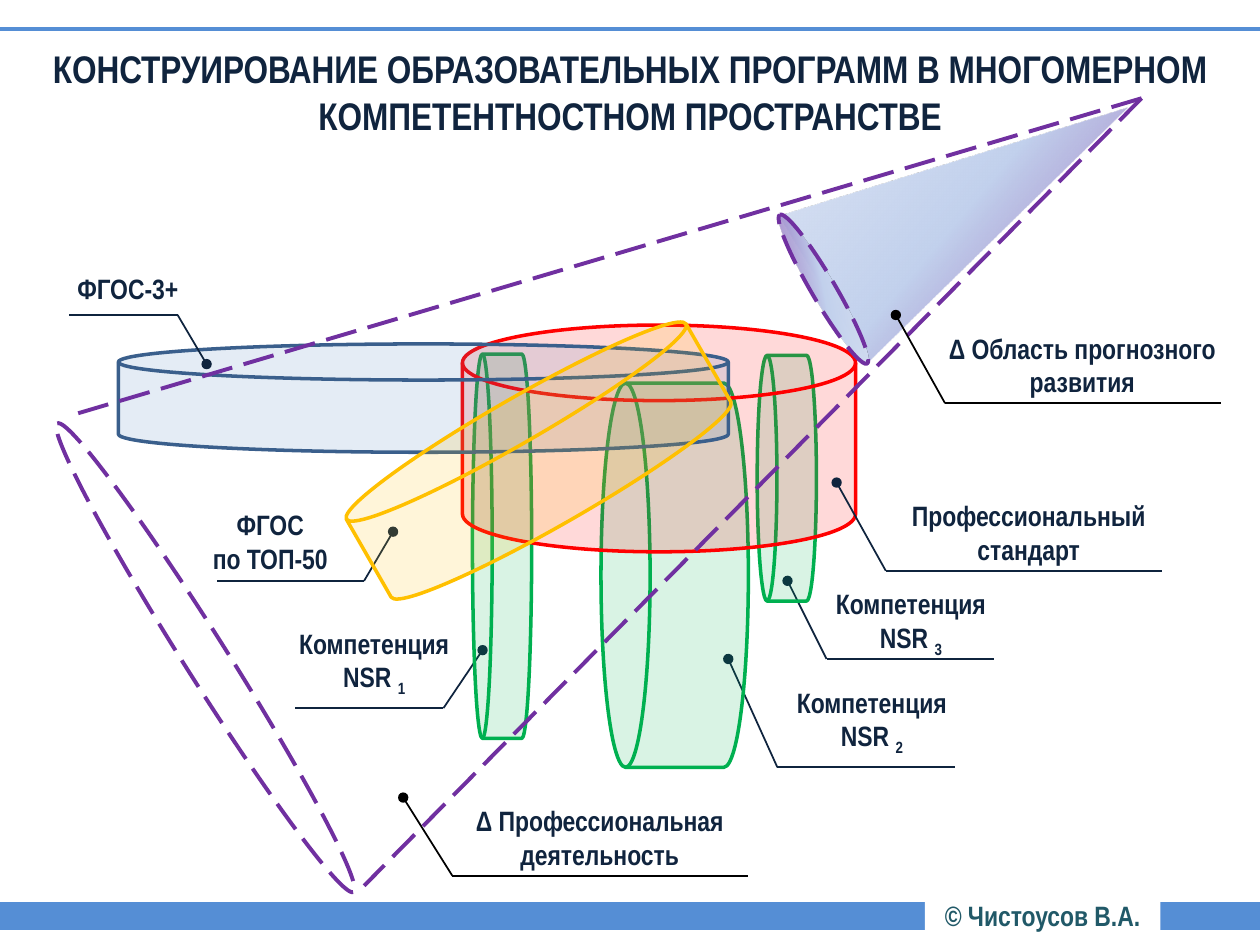
"""Builds the slide on designing educational programmes in a competence space."""
from dataclasses import dataclass

import pptx
import pptx.dml.color
import pptx.enum.dml
import pptx.enum.shapes
import pptx.enum.text
import pptx.oxml.ns
import pptx.util
from lxml import etree

SHAPE = pptx.enum.shapes.MSO_SHAPE
DISK = SHAPE.FLOWCHART_MAGNETIC_DISK
LINE = pptx.enum.shapes.MSO_CONNECTOR.STRAIGHT
DASH = pptx.enum.dml.MSO_LINE.LONG_DASH
ANCHOR = pptx.enum.text.MSO_ANCHOR
qn = pptx.oxml.ns.qn


@dataclass(frozen=True)
class Theme:
    font: str = "Arial Narrow"
    title_size: float = 22
    text_size: float = 16
    thin: float = 1
    outline: float = 2
    dashed: float = 2.25
    footer: float = 16.25
    ink: str = "10243E"
    leader: str = "0F243E"
    black: str = "000000"
    white: str = "FFFFFF"
    band: str = "558ED5"
    credit: str = "215968"
    green: str = "00B050"
    red: str = "FF0000"
    blue: str = "4F81BD"
    blue_edge: str = "3A5F8C"
    yellow: str = "FFC000"
    purple: str = "7030A0"
    pale: str = "C2D1ED"
    paler: str = "E1E8F5"
    glass: int = 15
    cone: int = 55


class Slide:
    COLUMNS, ROWS = 100, 75

    def __init__(self, prs, theme):
        self.theme = theme
        self.column = prs.slide_width / self.COLUMNS
        self.row = prs.slide_height / self.ROWS
        self.s = prs.slides.add_slide(prs.slide_layouts[5])

    def grid(self, *lengths):
        units = (self.column, self.row) * 2
        return [pptx.util.Emu(round(n * unit)) for n, unit in zip(lengths, units)]

    def rgb(self, color):
        return pptx.dml.color.RGBColor.from_string(color)

    def fill_text(self, tf, lines, size, color, subscript=None, anchor=ANCHOR.TOP):
        tf.word_wrap = True
        tf.auto_size = pptx.enum.text.MSO_AUTO_SIZE.NONE
        tf.vertical_anchor = anchor
        for i, line in enumerate(lines):
            p = tf.add_paragraph() if i else tf.paragraphs[0]
            p.alignment = pptx.enum.text.PP_ALIGN.CENTER
            p.font.name = self.theme.font
            p.font.size = pptx.util.Pt(size)
            p.font.bold = True
            p.font.color.rgb = self.rgb(color)
            p.add_run().text = line
        if subscript:
            r = p.add_run()
            r.text = subscript
            r.font._element.set("baseline", "-25000")

    def title(self, text, box):
        sp = self.s.shapes.title
        sp.left, sp.top, sp.width, sp.height = self.grid(*box)
        self.fill_text(sp.text_frame, [text], self.theme.title_size, self.theme.ink)

    def label(self, lines, box, subscript=None):
        sp = self.s.shapes.add_textbox(*self.grid(*box))
        self.fill_text(sp.text_frame, lines, self.theme.text_size, self.theme.ink, subscript)

    def line(self, start, end, color, width, dash=None, dot=False):
        sp = self.s.shapes.add_connector(LINE, *self.grid(*start, *end))
        sp.line.color.rgb = self.rgb(color)
        sp.line.width = pptx.util.Pt(width)
        if dash:
            sp.line.dash_style = dash
        if dot:
            etree.SubElement(sp.line._get_or_add_ln(), qn("a:tailEnd"), type="oval")
        etree.SubElement(sp._element.spPr, qn("a:effectLst"))

    def callout(self, lines, box, elbow, shelf_end, dot, subscript=None, color=None):
        color = color or self.theme.leader
        self.label(lines, box, subscript)
        self.line(elbow, (shelf_end, elbow[1]), color, self.theme.thin)
        self.line(elbow, dot, color, self.theme.thin, dot=True)

    def shape(self, kind, box, rotation=0, edge=None, width=None, dash=None):
        sp = self.s.shapes.add_shape(kind, *self.grid(*box))
        sp.shadow.inherit = False
        sp.rotation = rotation
        sp.fill.background()
        if edge:
            sp.line.color.rgb = self.rgb(edge)
            sp.line.width = pptx.util.Pt(width)
            sp.line.dash_style = dash
        else:
            sp.line.fill.background()
        return sp

    def disk(self, box, color, rotation=0, edge=None):
        sp = self.shape(DISK, box, rotation, edge or color, self.theme.outline)
        sp.fill.solid()
        sp.fill.fore_color.rgb = self.rgb(color)
        self.opacity(sp._element.spPr.find(qn("a:solidFill")).find(qn("a:srgbClr")), self.theme.glass)

    def ellipse(self, box, rotation):
        return self.shape(SHAPE.OVAL, box, rotation, self.theme.purple, self.theme.dashed, DASH)

    def opacity(self, element, percent):
        etree.SubElement(element, qn("a:alpha"), val=str(percent * 1000))

    def gradient(self, sp, angle, first_opacity=100):
        sp.fill.gradient()
        sp.fill.gradient_angle = 360 - angle
        stops = sp._element.spPr.find(".//" + qn("a:gsLst"))
        for stop in list(stops):
            stops.remove(stop)
        t = self.theme
        for position, color, percent in ((0, t.purple, first_opacity), (50, t.pale, 100), (100, t.paler, 100)):
            stop = etree.SubElement(stops, qn("a:gs"), pos=str(position * 1000))
            self.opacity(etree.SubElement(stop, qn("a:srgbClr"), val=color), percent)

    def credit(self, text, box):
        sp = self.shape(SHAPE.RECTANGLE, box)
        sp.fill.solid()
        sp.fill.fore_color.rgb = self.rgb(self.theme.white)
        self.fill_text(sp.text_frame, [text], self.theme.text_size, self.theme.credit, anchor=ANCHOR.MIDDLE)


def main():
    prs = pptx.Presentation()
    prs.slide_width, prs.slide_height = pptx.util.Inches(10), pptx.util.Inches(7.5)
    t = Theme()
    s = Slide(prs, t)

    for y, width in ((2.3, t.dashed), (72.7, t.footer)):
        s.line((0, y), (s.COLUMNS, y), t.band, width)
    s.title("КОНСТРУИРОВАНИЕ ОБРАЗОВАТЕЛЬНЫХ ПРОГРАММ В МНОГОМЕРНОМ "
            "КОМПЕТЕНТНОСТНОМ ПРОСТРАНСТВЕ", (0, 3.1, 100, 8.3))

    competences = (
        ("2", (60.2, 53.9, 18, 6.7), (61.7, 60.9), 75.8, (57.8, 52.3), (38.3, 39.8, 30.5, 11.7)),
        ("1", (21.9, 49.2, 15.6, 6.7), (35.2, 56.2), 23.4, (38.3, 51.6), (24.6, 41, 30.5, 4.7)),
        ("3", (63.3, 46.1, 18, 6.7), (65.6, 52.3), 78.9, (62.5, 46.1), (52.7, 35.6, 19.5, 4.7)),
    )
    for number, box, elbow, shelf_end, dot, disk in competences:
        s.callout(["Компетенция", "NSR "], box, elbow, shelf_end, dot, number)
        s.disk(disk, t.green, 270)

    s.disk((36.7, 25.8, 31.2, 18), t.red)
    s.callout(["Профессиональный", "стандарт"], (70.3, 39.1, 22.7, 6.3), (70.3, 45.3), 92.2, (66.4, 38.3))
    s.disk((9.4, 27.3, 48.4, 8.6), t.blue, edge=t.blue_edge)
    s.callout(["ФГОС-3+"], (4.7, 21.1, 10.9, 3.6), (14.1, 25), 5.5, (16.4, 28.9))
    s.callout(["Δ Профессиональная деятельность"], (35.9, 63.3, 23.4, 6.3), (35.9, 69.5), 59.4, (32, 63.3),
              color=t.black)

    s.ellipse((-5.7, 50.5, 44, 3.4), 57.7)
    for end in ((6.2, 32.8), (28.9, 70.3)):
        s.line((90.6, 7.8), end, t.purple, t.dashed, DASH)

    s.callout(["ФГОС", "по ТОП-50"], (14.8, 39.8, 13.3, 6.3), (28.9, 46.1), 17.2, (31.2, 42.2))
    s.disk((27.2, 31.2, 31.1, 10.7), t.yellow, 330.1)

    s.gradient(s.shape(SHAPE.ISOSCELES_TRIANGLE, (70.6, 1.7, 13.6, 28.1), 59.1), 161, t.cone)
    s.gradient(s.ellipse((58.5, 22, 13.7, 1.9), 59.6), 290, t.cone)
    s.callout(["Δ Область прогнозного развития"], (74.2, 25.8, 23.4, 6.3), (75, 32), 96.9, (71.1, 25),
              color=t.black)
    s.credit("© Чистоусов В.А.", (73.4, 70.3, 18.7, 4.7))
    prs.save("out.pptx")


if __name__ == "__main__":
    main()
